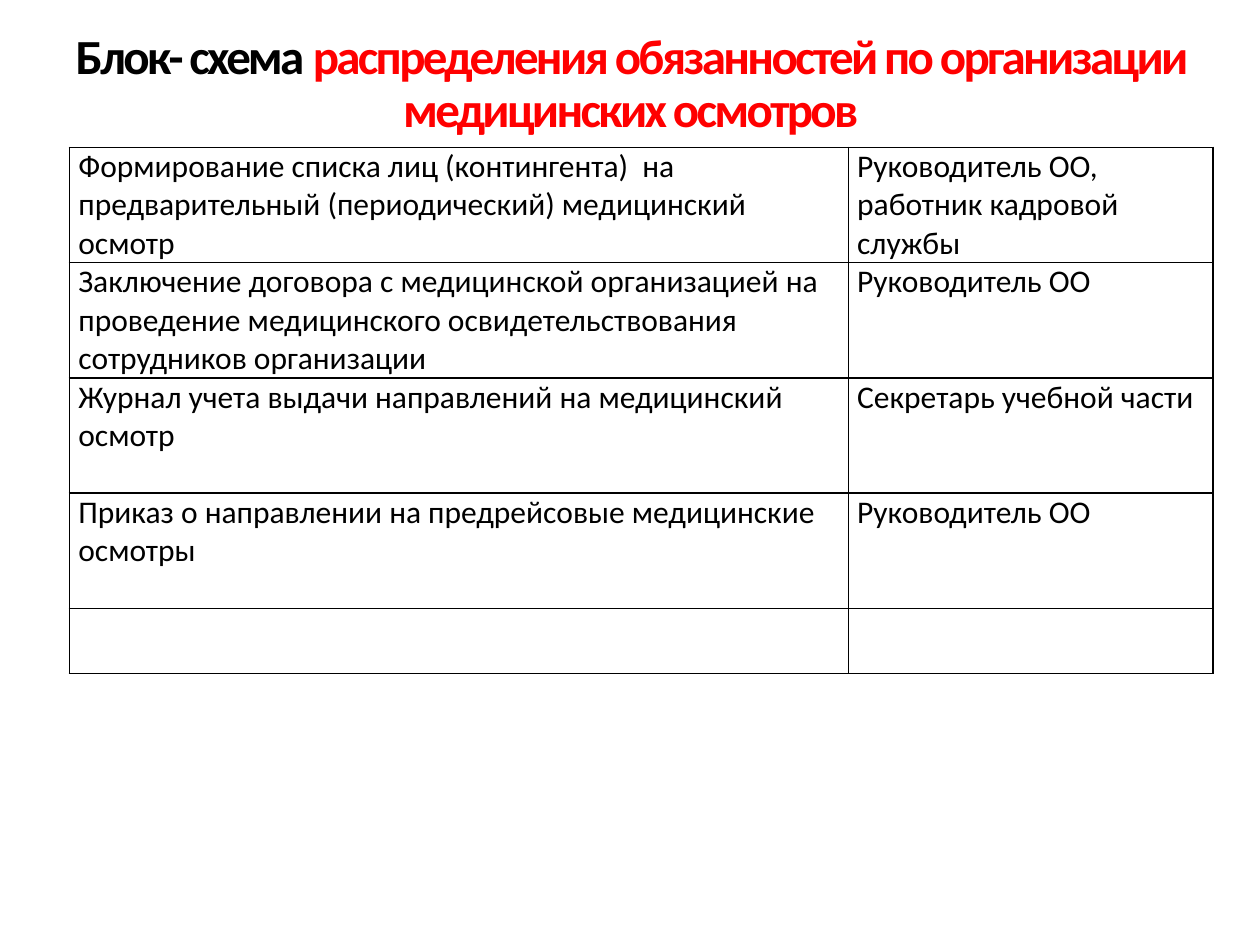
import pptx
import pptx.util
import pptx.dml.color
import pptx.enum.text
import pptx.oxml.ns
import lxml.etree

Cm = pptx.util.Cm
Pt = pptx.util.Pt
RGB = pptx.dml.color.RGBColor

HEAD = [
    ("Блок- схема ", "ink"),
    ("распределения обязанностей по организации медицинских осмотров", "mark"),
]
DUTIES = [
    ("Формирование списка лиц (контингента)  на предварительный (периодический) медицинский осмотр",
     "Руководитель ОО, работник кадровой службы"),
    ("Заключение договора с медицинской организацией на проведение медицинского освидетельствования сотрудников организации",
     "Руководитель ОО"),
    ("Журнал учета выдачи направлений на медицинский осмотр", "Секретарь учебной части"),
    ("Приказ о направлении на предрейсовые медицинские осмотры", "Руководитель ОО"),
    ("", ""),
]
THEME = {
    "font": "Calibri", "ink": "000000", "mark": "FF0000",
    "head": 28, "body": 18, "line": 1, "track": -1.5,
}
COLS = [15.7, 7.35]
FULL, LAST = 2.32, 1.32


def add_run(para, text, size, tone, bold=False):
    run = para.add_run()
    run.text = text
    font = run.font
    font.name = THEME["font"]
    font.size = Pt(size)
    font.bold = bold
    font.color.rgb = RGB.from_string(THEME[tone])
    return run


def add_edges(cell):
    props = cell._tc.get_or_add_tcPr()
    qn = pptx.oxml.ns.qn
    for side in ("lnL", "lnR", "lnT", "lnB"):
        edge = lxml.etree.SubElement(props, qn("a:" + side), w=str(Pt(THEME["line"])))
        fill = lxml.etree.SubElement(edge, qn("a:solidFill"))
        lxml.etree.SubElement(fill, qn("a:srgbClr"), val=THEME["ink"])


def add_title(slide):
    title = slide.shapes.title
    title.left, title.top, title.width, title.height = Cm(1.07), Cm(0.64), Cm(23.29), Cm(2.16)
    frame = title.text_frame
    frame.margin_left = frame.margin_right = frame.margin_top = frame.margin_bottom = 0
    frame.word_wrap = True
    frame.auto_size = pptx.enum.text.MSO_AUTO_SIZE.NONE
    frame.vertical_anchor = pptx.enum.text.MSO_ANCHOR.MIDDLE
    para = frame.paragraphs[0]
    para.alignment = pptx.enum.text.PP_ALIGN.CENTER
    para.line_spacing = 0.9
    for text, tone in HEAD:
        run = add_run(para, text, THEME["head"], tone, True)
        run._r.get_or_add_rPr().set("spc", str(int(THEME["track"] * 100)))


def add_grid(slide):
    highs = [FULL if duty else LAST for duty, who in DUTIES]
    shape = slide.shapes.add_table(len(DUTIES), len(COLS), Cm(1.4), Cm(2.97),
                                   Cm(sum(COLS)), Cm(sum(highs)))
    table = shape.table
    table.first_row = table.horz_banding = False
    for col, width in zip(table.columns, COLS):
        col.width = Cm(width)
    for row, high, texts in zip(table.rows, highs, DUTIES):
        row.height = Cm(high)
        for cell, text in zip(row.cells, texts):
            add_edges(cell)
            cell.fill.background()
            cell.margin_left = cell.margin_right = Cm(0.18)
            cell.margin_top = cell.margin_bottom = 0
            if text:
                add_run(cell.text_frame.paragraphs[0], text, THEME["body"], "ink")


def main():
    deck = pptx.Presentation()
    deck.slide_width, deck.slide_height = Cm(25.4), Cm(19.05)
    slide = deck.slides.add_slide(deck.slide_layouts[5])
    add_title(slide)
    add_grid(slide)
    deck.save("out.pptx")


if __name__ == "__main__":
    main()
